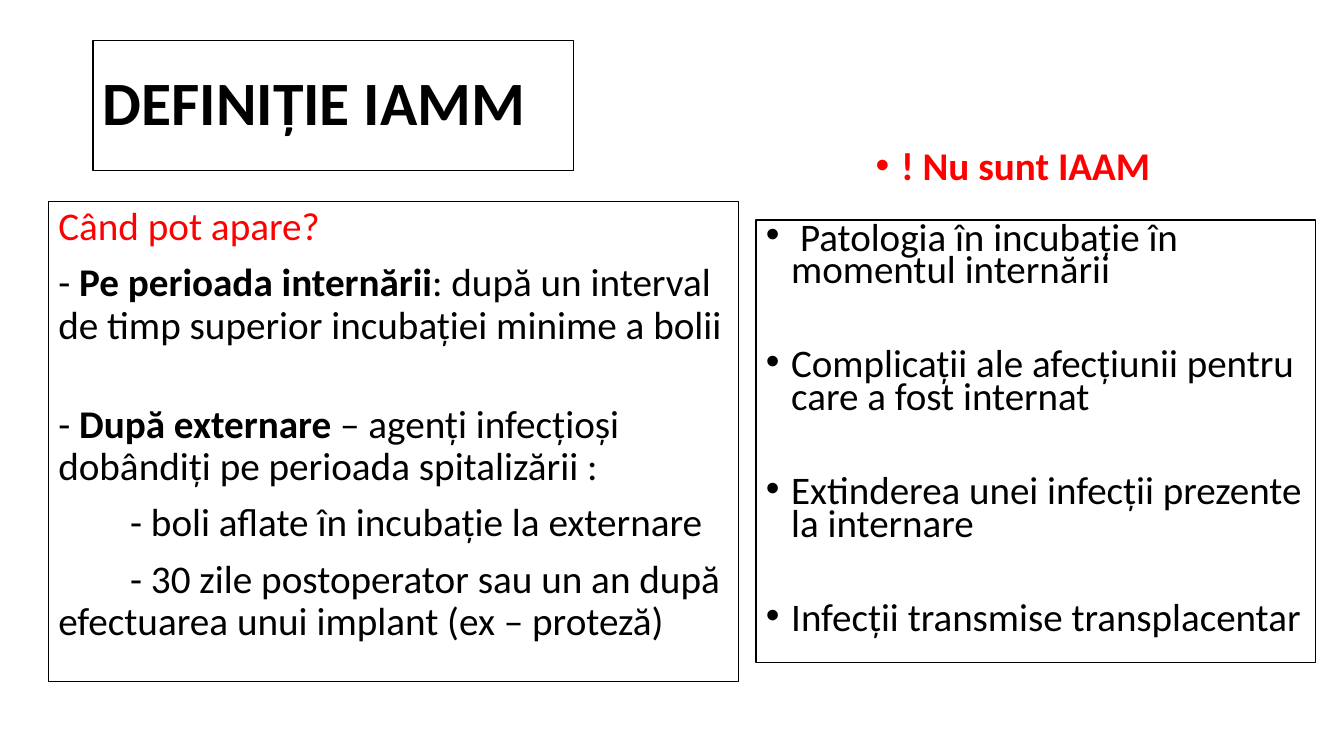
from dataclasses import dataclass
from lxml import etree
from pptx import Presentation
from pptx.dml.color import RGBColor
from pptx.enum.shapes import MSO_SHAPE
from pptx.enum.text import MSO_ANCHOR, PP_ALIGN
from pptx.oxml.ns import qn
from pptx.util import Cm, Pt

RECTANGLE = MSO_SHAPE.RECTANGLE
TOP, MIDDLE = MSO_ANCHOR.TOP, MSO_ANCHOR.MIDDLE
LEFT = PP_ALIGN.LEFT


@dataclass(frozen=True)
class Theme:
    font: str = "Calibri"
    ink: RGBColor = RGBColor(0, 0, 0)
    accent: RGBColor = RGBColor(255, 0, 0)
    paper: RGBColor = RGBColor(255, 255, 255)
    title_size: float = 44
    body_size: float = 28
    list_size: float = 27.9
    border: float = 1


THEME = Theme()
PLAIN, BOLD = False, True
BULLET_INDENT = Cm(0.64)
SUBITEM_INDENT = Cm(1.81)
GAP, WIDE_GAP, LIST_GAP = 10, 40.5, 43.8

TITLE = [("DEFINIȚIE IAMM", BOLD)]
QUESTION = [("Când pot apare?", PLAIN)]
ONSETS = [
    (GAP, 0, [("- ", PLAIN), ("Pe perioada internării", BOLD),
              (": după un interval de timp superior incubației minime a bolii", PLAIN)]),
    (WIDE_GAP, 0, [("- ", PLAIN), ("După externare ", BOLD),
                   ("– agenți infecțioși dobândiți pe perioada spitalizării :", PLAIN)]),
    (GAP, SUBITEM_INDENT, [("- boli aflate în incubație la externare", PLAIN)]),
    (GAP, SUBITEM_INDENT,
     [("- 30 zile postoperator sau un an după efectuarea unui implant (ex – proteză)", PLAIN)]),
]
EXCLUSION_HEADING = [("! Nu sunt IAAM", BOLD)]
EXCLUSIONS = [
    " Patologia în incubație în momentul internării",
    "Complicații ale afecțiunii pentru care a fost internat",
    "Extinderea unei infecții prezente la internare",
    "Infecții transmise transplacentar",
]

TITLE_BOX = (2.34, 1.02, 12.12, 3.28)
ONSET_BOX = (1.22, 5.08, 17.4, 12.09)
HEADING_BOX = (21.82, 3.56, 9.7, 1.5)
EXCLUSION_BOX = (19.05, 5.54, 14.1, 11.15)


def add_panel(slide, box, anchor=TOP):
    panel = slide.shapes.add_shape(RECTANGLE, *map(Cm, box))
    panel.shadow.inherit = False
    panel.fill.solid()
    panel.fill.fore_color.rgb = THEME.paper
    panel.line.color.rgb = THEME.ink
    panel.line.width = Pt(THEME.border)
    return prepare_frame(panel, anchor)


def prepare_frame(holder, anchor=TOP):
    frame = holder.text_frame
    frame.word_wrap = True
    frame.vertical_anchor = anchor
    return frame


def write(paragraph, runs, size, color=THEME.ink, spacing=0.9, before=0,
          indent=0, bulleted=False):
    paragraph.alignment = LEFT
    paragraph.line_spacing = spacing
    paragraph.space_before = Pt(before)
    properties = paragraph._p.get_or_add_pPr()
    properties.set("marL", str(BULLET_INDENT if bulleted else 0))
    properties.set("indent", str(-BULLET_INDENT if bulleted else indent))
    if bulleted:
        etree.SubElement(properties, qn("a:buFont")).set("typeface", "Arial")
        etree.SubElement(properties, qn("a:buChar")).set("char", "•")
    for words, bold in runs:
        run = paragraph.add_run()
        run.text = words
        run.font.name = THEME.font
        run.font.size = Pt(size)
        run.font.bold = bold
        run.font.color.rgb = color


def main():
    deck = Presentation()
    deck.slide_width, deck.slide_height = Cm(33.87), Cm(19.05)
    slide = deck.slides.add_slide(deck.slide_layouts[6])

    title = add_panel(slide, TITLE_BOX, MIDDLE)
    write(title.paragraphs[0], TITLE, THEME.title_size)

    onset = add_panel(slide, ONSET_BOX)
    write(onset.paragraphs[0], QUESTION, THEME.body_size, THEME.accent)
    for before, indent, runs in ONSETS:
        write(onset.add_paragraph(), runs, THEME.body_size, before=before, indent=indent)

    heading = prepare_frame(slide.shapes.add_textbox(*map(Cm, HEADING_BOX)))
    write(heading.paragraphs[0], EXCLUSION_HEADING, THEME.body_size, THEME.accent,
          bulleted=True)

    exclusions = add_panel(slide, EXCLUSION_BOX)
    for index, exclusion in enumerate(EXCLUSIONS):
        paragraph = exclusions.add_paragraph() if index else exclusions.paragraphs[0]
        write(paragraph, [(exclusion, PLAIN)], THEME.list_size, spacing=0.7,
              before=LIST_GAP if index else 0, bulleted=True)

    deck.save("out.pptx")


if __name__ == "__main__":
    main()
